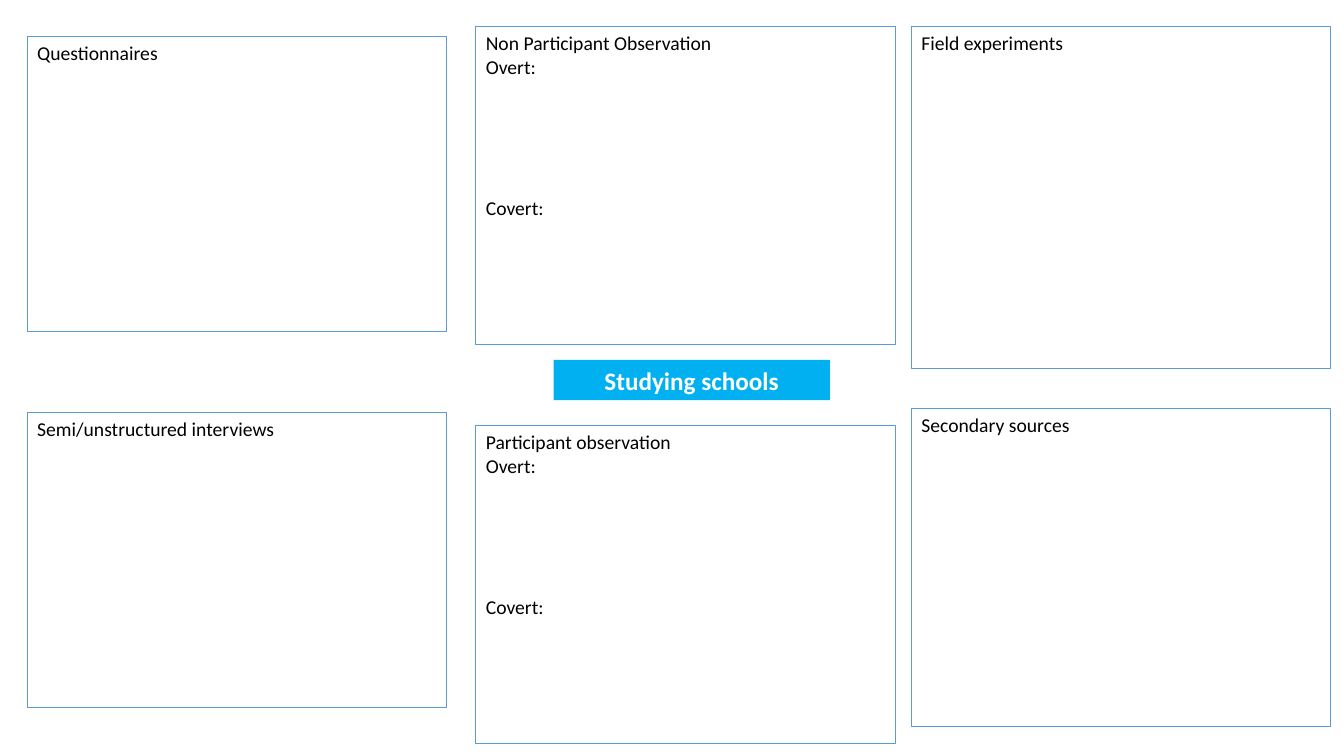
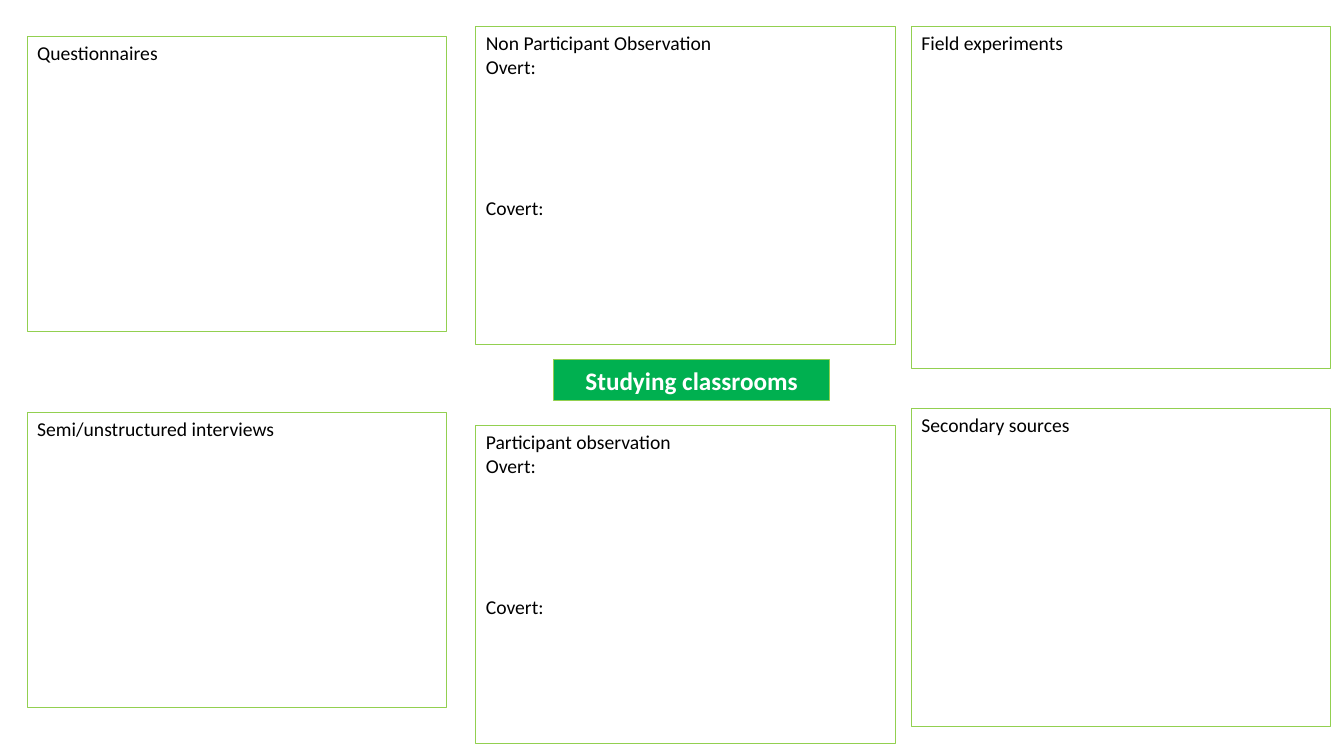
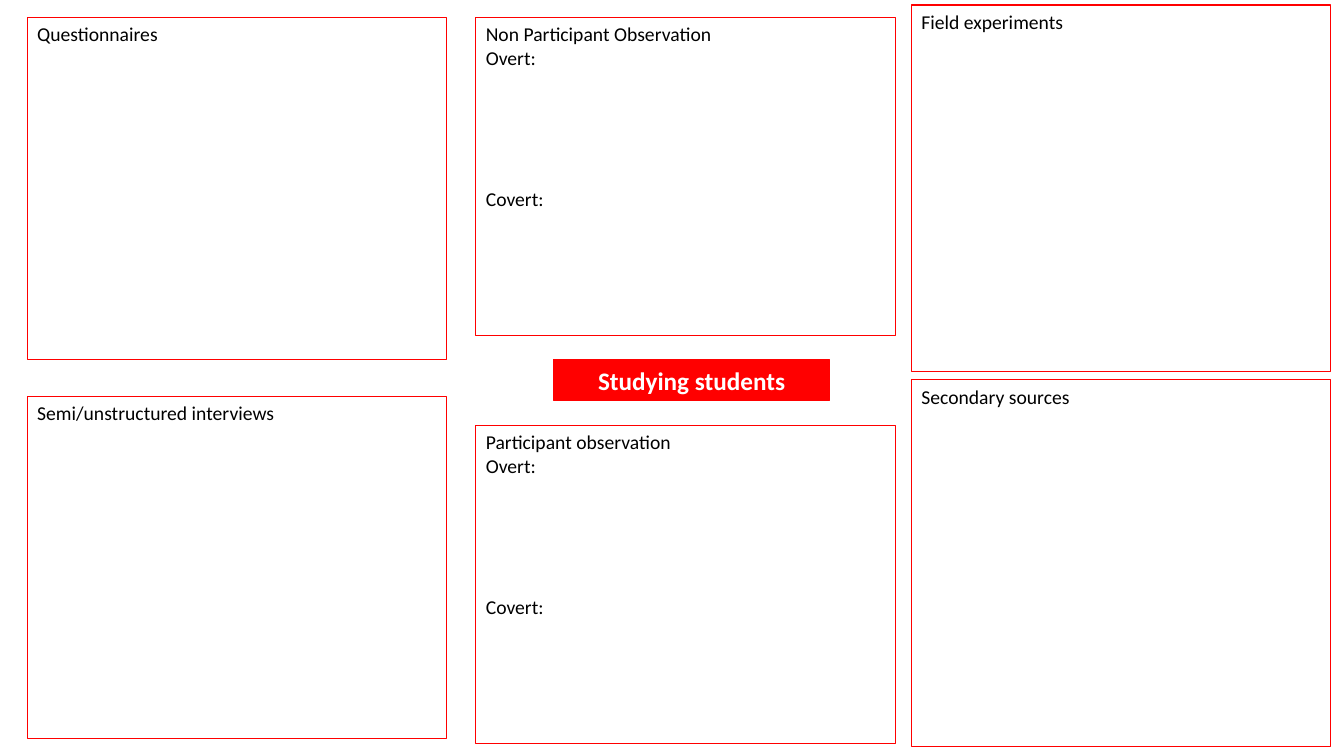
"""Build three research-method worksheets for schools, classrooms and students."""
from dataclasses import dataclass

from pptx import Presentation
from pptx import util as u
from pptx.dml.color import RGBColor
from pptx.enum import text as t

PX = 9144


@dataclass(frozen=True)
class Theme:
    font: str = "Calibri"
    ink: str = "000000"
    title_ink: str = "FFFFFF"
    body_size: int = 14
    title_size: int = 18
    line_width: float = 0.75
    writing_gap: int = 84


@dataclass(frozen=True)
class Worksheet:
    title: str
    fill: str
    box_line: str
    title_line: str | None
    rows: tuple


THEME = Theme()
SLIDE_SIZE = (1333, 750)
TITLE_AREA = (549, 357, 274, 40)
COLUMNS = (27, 472, 904)
BOX_WIDTH = 416
OBSERVATION = ("Overt:", "Covert:")
METHODS = (
    (("Questionnaires",),
     ("Non Participant Observation", *OBSERVATION),
     ("Field experiments",)),
    (("Semi/unstructured interviews",),
     ("Participant observation", *OBSERVATION),
     ("Secondary sources",)),
)
STANDARD_ROWS = (
    ((36, 293), (26, 316), (26, 340)),
    ((409, 293), (422, 316), (405, 316)),
)
TALL_ROWS = (
    ((17, 340), (17, 316), (5, 364)),
    ((393, 340), (422, 316), (377, 364)),
)
WORKSHEETS = (
    Worksheet("Studying schools", "00B0F0", "5B9BD5", None, STANDARD_ROWS),
    Worksheet("Studying classrooms", "00B050", "92D050", "92D050", STANDARD_ROWS),
    Worksheet("Studying students", "FF0000", "FF0000", "FF0000", TALL_ROWS),
)


def px(length):
    return u.Emu(length * PX)


def place(shape, left, top, width, height):
    shape.left, shape.top = px(left), px(top)
    shape.width, shape.height = px(width), px(height)


def outline(shape, colour):
    if colour is None:
        shape.line.fill.background()
    else:
        shape.line.color.rgb = RGBColor.from_string(colour)
        shape.line.width = u.Pt(THEME.line_width)


def write(paragraph, text, *, size=THEME.body_size, colour=THEME.ink,
          bold=False, align=t.PP_ALIGN.LEFT, before=0):
    paragraph.text = text
    paragraph.alignment = align
    paragraph.space_before = u.Pt(before)
    font = paragraph.font
    font.name, font.size, font.bold = THEME.font, u.Pt(size), bold
    font.color.rgb = RGBColor.from_string(colour)


def prepare_frame(shape):
    frame = shape.text_frame
    frame.word_wrap = True
    frame.auto_size = t.MSO_AUTO_SIZE.NONE
    frame.vertical_anchor = t.MSO_ANCHOR.TOP
    return frame


def format_title(slide, worksheet):
    title = slide.shapes.title
    place(title, *TITLE_AREA)
    title.fill.solid()
    title.fill.fore_color.rgb = RGBColor.from_string(worksheet.fill)
    outline(title, worksheet.title_line)
    write(prepare_frame(title).paragraphs[0], worksheet.title,
          size=THEME.title_size, colour=THEME.title_ink, bold=True,
          align=t.PP_ALIGN.CENTER)


def add_method_box(slide, area, lines, colour):
    box = slide.shapes.add_textbox(*map(px, area))
    outline(box, colour)
    frame = prepare_frame(box)
    for index, line in enumerate(lines):
        paragraph = frame.add_paragraph() if index else frame.paragraphs[0]
        write(paragraph, line,
              before=THEME.writing_gap if line == "Covert:" else 0)


def add_worksheet(presentation, worksheet):
    slide = presentation.slides.add_slide(presentation.slide_layouts[5])
    format_title(slide, worksheet)
    for methods, spans in zip(METHODS, worksheet.rows):
        for left, lines, (top, height) in zip(COLUMNS, methods, spans):
            add_method_box(slide, (left, top, BOX_WIDTH, height), lines,
                           worksheet.box_line)


def main():
    presentation = Presentation()
    presentation.slide_width, presentation.slide_height = map(px, SLIDE_SIZE)
    for worksheet in WORKSHEETS:
        add_worksheet(presentation, worksheet)
    presentation.save("out.pptx")


if __name__ == "__main__":
    main()
